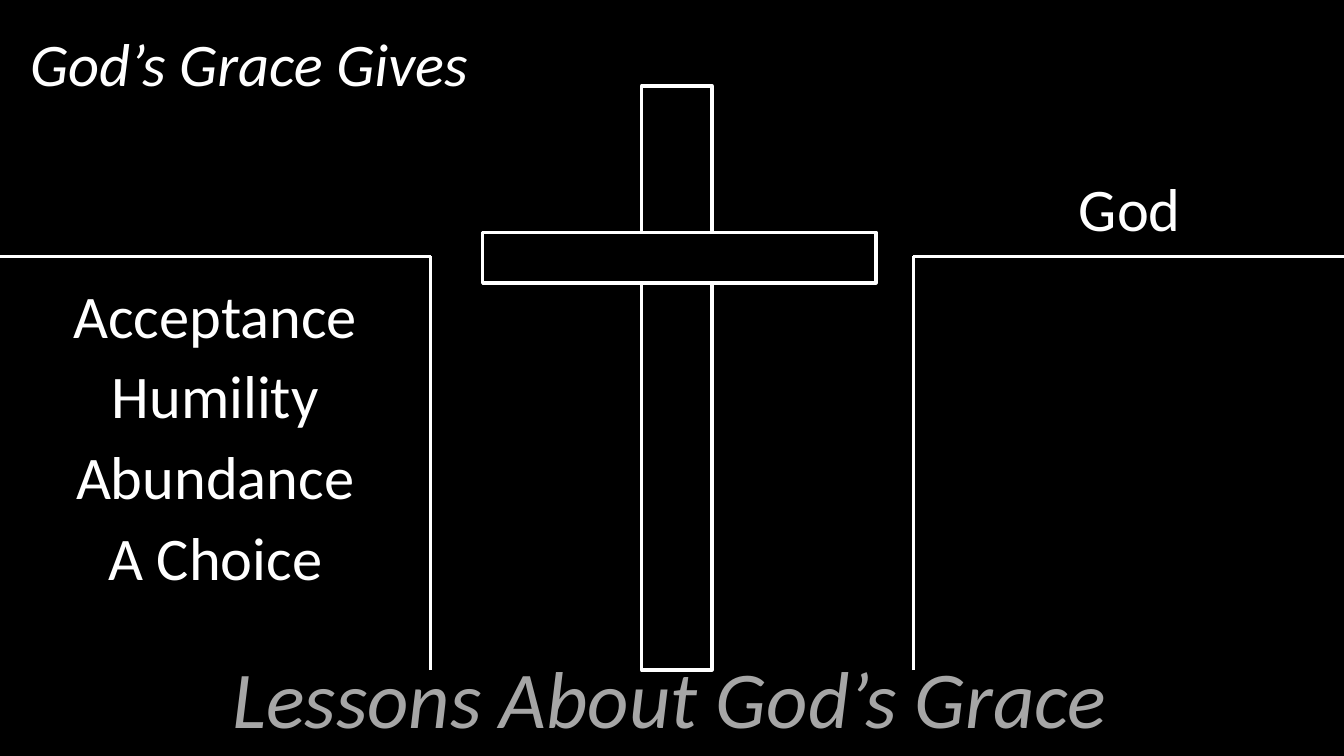
from lxml import etree
from pptx import Presentation
from pptx.dml.color import RGBColor
from pptx.enum.shapes import MSO_CONNECTOR, MSO_SHAPE
from pptx.enum.text import MSO_ANCHOR, PP_ALIGN
from pptx.oxml.ns import qn
from pptx.util import Inches, Pt

STRAIGHT = MSO_CONNECTOR.STRAIGHT
RECTANGLE = MSO_SHAPE.RECTANGLE
MIDDLE = MSO_ANCHOR.MIDDLE
LEFT, CENTER = PP_ALIGN.LEFT, PP_ALIGN.CENTER

TITLE_ONLY = 5
WIDTH, HEIGHT = 11.11, 6.25
FONT = "Calibri"
BLACK, WHITE, GREY = "000000", "FFFFFF", "A6A6A6"
LINE_WIDTH = Pt(2)


def color(hex_string):
    return RGBColor.from_string(hex_string)


def inches(box):
    return [Inches(length) for length in box]


def format_text(paragraph, size, tone, align, italic):
    paragraph.alignment = align
    for run in paragraph.runs:
        run.font.name = FONT
        run.font.size = Pt(size)
        run.font.italic = italic
        run.font.color.rgb = color(tone)


def add_title(slide, box, text):
    title = slide.shapes.title
    title.left, title.top, title.width, title.height = inches(box)
    frame = title.text_frame
    frame.text = text
    frame.vertical_anchor = MIDDLE
    format_text(frame.paragraphs[0], 48, GREY, CENTER, True)


def add_words(slide, box, lines, align=CENTER, italic=False):
    frame = slide.shapes.add_textbox(*inches(box)).text_frame
    frame.word_wrap = True
    frame.text = "\n".join(lines)
    for paragraph in frame.paragraphs:
        paragraph.line_spacing = 0.95
        paragraph.space_before = Pt(7)
        format_text(paragraph, 36, WHITE, align, italic)


def add_line(slide, start, end):
    line = slide.shapes.add_connector(STRAIGHT, *inches(start + end))
    line.line.color.rgb = color(WHITE)
    line.line.width = LINE_WIDTH
    etree.SubElement(line._element.spPr, qn("a:effectLst"))


def add_cliff(slide, box, edge_on_right):
    """Draw the flat top of a cliff and its face beside the gap."""
    left, top, width, height = box
    face = left + width if edge_on_right else left
    add_line(slide, (left, top), (left + width, top))
    add_line(slide, (face, top + height), (face, top))


def add_beam(slide, box):
    beam = slide.shapes.add_shape(RECTANGLE, *inches(box))
    beam.shadow.inherit = False
    beam.fill.solid()
    beam.fill.fore_color.rgb = color(BLACK)
    beam.line.color.rgb = color(WHITE)
    beam.line.width = LINE_WIDTH


def add_cross(slide, box):
    """Draw the upright, then the crossbeam in front of it."""
    left, top, width, height = box
    upright = 0.58
    add_beam(slide, (left + (width - upright) / 2 - 0.02, top, upright, height))
    add_beam(slide, (left, top + 1.21, width, 0.42))


def build_slide(presentation):
    slide = presentation.slides.add_slide(presentation.slide_layouts[TITLE_ONLY])
    slide.background.fill.solid()
    slide.background.fill.fore_color.rgb = color(BLACK)

    # Lesson title and heading
    add_title(slide, (0.07, 5.38, 10.93, 0.76), "Lessons About God’s Grace")
    add_words(slide, (0.15, 0.21, 5.41, 1.92), ["God’s Grace Gives"], LEFT, True)

    # Cliffs on both sides of the gap
    cliff_top, cliff_width, cliff_height = 2.12, 3.56, 3.42
    add_cliff(slide, (0, cliff_top, cliff_width, cliff_height), True)
    add_cliff(slide, (WIDTH - cliff_width, cliff_top, cliff_width, cliff_height), False)

    # Words on each side
    add_words(slide, (8.51, 1.41, 1.66, 0.67), ["God"])
    add_words(slide, (0.06, 2.29, 3.44, 3.09),
              ["Acceptance", "Humility", "Abundance", "A Choice"])

    # Cross in the gap
    add_cross(slide, (3.99, 0.71, 3.25, 4.83))


def main():
    presentation = Presentation()
    presentation.slide_width = Inches(WIDTH)
    presentation.slide_height = Inches(HEIGHT)
    build_slide(presentation)
    presentation.save("out.pptx")


if __name__ == "__main__":
    main()
